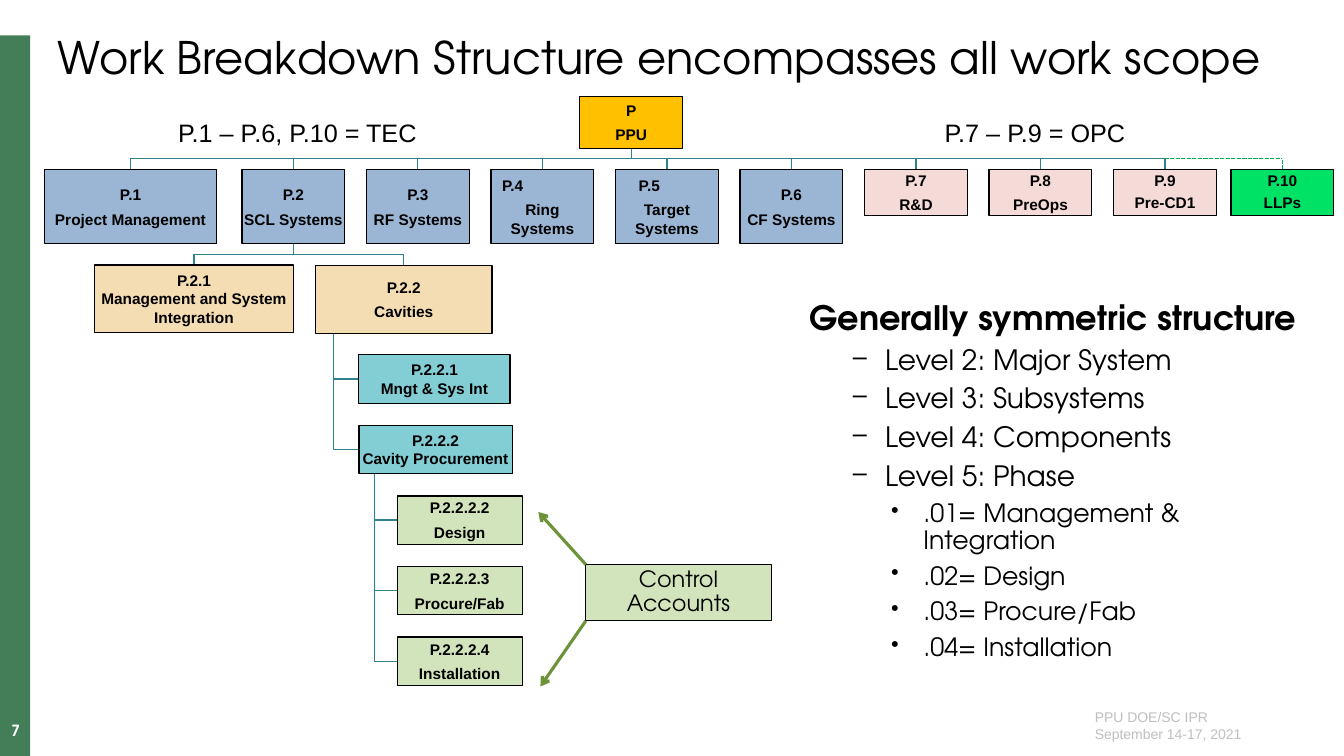
from lxml.etree import SubElement
from pptx import Presentation
from pptx.dml.color import RGBColor
from pptx.enum.dml import MSO_LINE as Dash
from pptx.enum.shapes import MSO_CONNECTOR as Conn, MSO_SHAPE as Shape
from pptx.enum.text import MSO_ANCHOR as Anchor, PP_ALIGN as Align
from pptx.oxml.ns import qn
from pptx.util import Inches, Pt

# Content
TITLE = "Work Breakdown Structure encompasses all work scope"
HEAD = "Generally symmetric structure"
LEVELS = [
    (1, "Level 2: Major System"), (1, "Level 3: Subsystems"),
    (1, "Level 4: Components"), (1, "Level 5: Phase"),
    (2, ".01= Management & Integration"), (2, ".02= Design"),
    (2, ".03= Procure/Fab"), (2, ".04= Installation"),
]
STYLE = {1: ("–", 0.75, 20), 2: ("•", 1.13, 18)}  # bullet, indent, size
SCOPES = [("P.1 – P.6, P.10 = TEC", 0.77, 4.36), ("P.7 – P.9 = OPC", 8.91, 2.71)]
FOOT = ["PPU DOE/SC IPR", "September 14-17, 2021"]
SYSTEMS = ["SCL Systems", "RF Systems", "Ring Systems", "Target Systems",
           "CF Systems", "R&D", "PreOps", "Pre-CD1"]
PHASES = ["Design", "Procure/Fab", "Installation"]
INDENT = {"P.4": 0.1, "P.5": 0.22}  # codes set off to the left
TIGHT = {"P.9", "P.10"}             # codes with narrow line spacing
PACKED = {"P.2.1", "P.2.2.1", "P.2.2.2"}  # codes without a gap below

SANS, GEO = "Arial", "TeX Gyre Adventor"
GOLD, BLUE, PINK, LIME = "FFC000", "9AB6D4", "F5DBD8", "00E266"
SAND, AQUA, LEAF = "F5DDB3", "83CDD5", "D2E4BB"
TEAL, DASHED, ARROW = "2F828B", "00B050", "6C923A"

# Boxes: code -> name, left, top, width, height, fill
ROW, WIDE, STEP = 1.68, 1.02, 1.235
boxes = {
    "P": ("PPU", 5.75, 0.96, WIDE, 0.51, GOLD),
    "P.1": ("Project Management", 0.44, ROW, 1.71, 0.74, BLUE),
}
for i, name in enumerate(SYSTEMS):
    tall, fill = (0.74, BLUE) if i < 5 else (0.46, PINK)
    boxes[f"P.{i + 2}"] = (name, 2.4 + STEP * i, ROW, WIDE, tall, fill)
tops = list(boxes)[1:]
boxes |= {
    "P.10": ("LLPs", 12.21, ROW, WIDE, 0.46, LIME),
    "P.2.1": ("Management and System Integration", 0.94, 2.63, 1.97, 0.67, SAND),
    "P.2.2": ("Cavities", 3.13, 2.63, 1.75, 0.68, SAND),
    "P.2.2.1": ("Mngt & Sys Int", 3.56, 3.52, 1.5, 0.48, AQUA),
    "P.2.2.2": ("Cavity Procurement", 3.56, 4.22, 1.52, 0.48, AQUA),
}
for i, name in enumerate(PHASES):
    boxes[f"P.2.2.2.{i + 2}"] = (name, 3.94, 4.92 + 0.7 * i, 1.24, 0.48, LEAF)

deck = Presentation()
deck.slide_width, deck.slide_height = Inches(13.33), Inches(7.5)
slide = deck.slides.add_slide(deck.slide_layouts[5])
shapes = slide.shapes


def color(code):
    return RGBColor.from_string(code)


def place(*nums):
    return [Inches(n) for n in nums]


def write(par, text, size, font=SANS, ink="000000", bold=False,
          align=Align.LEFT, line=None):
    run = par.add_run()
    run.text = text
    run.font.size, run.font.name, run.font.bold = Pt(size), font, bold
    run.font.color.rgb = color(ink)
    par.alignment = align
    if line:
        par.line_spacing = line


def setup(frame, inset=None, anchor=Anchor.TOP):
    frame.word_wrap, frame.vertical_anchor = True, anchor
    if inset is not None:
        frame.margin_left = frame.margin_right = Inches(inset)
        frame.margin_top = frame.margin_bottom = Inches(inset)
    return frame


def label(spot, inset=None):
    return setup(shapes.add_textbox(*place(*spot)).text_frame, inset)


def block(spot, fill, edge=None):
    box = shapes.add_shape(Shape.RECTANGLE, *place(*spot))
    box.shadow.inherit = False
    box.fill.solid()
    box.fill.fore_color.rgb = color(fill)
    if edge:
        box.line.color.rgb, box.line.width = color("000000"), Pt(edge)
    else:
        box.line.fill.background()
    return box.text_frame


def elbow(points):
    first, *rest = [place(*p) for p in points]
    path = shapes.build_freeform(*first)
    path.add_line_segments(rest, close=False)
    bend = path.convert_to_shape()
    bend.shadow.inherit = False
    bend.fill.background()
    bend.line.color.rgb, bend.line.width = color(TEAL), Pt(0.85)


def link(start, end, ink, width):
    line = shapes.add_connector(Conn.STRAIGHT, *place(*start, *end))
    line.line.color.rgb, line.line.width = color(ink), Pt(width)
    SubElement(line._element.spPr, qn("a:effectLst"))
    return line


def drop(top, kid):
    """Join a box to one in the row below."""
    _, x, y, w, h, _ = boxes[top]
    _, left, end, wide, _, _ = boxes[kid]
    mid, goal, bar = x + w / 2, left + wide / 2, (y + h + end) / 2
    elbow([(mid, y + h), (mid, bar), (goal, bar), (goal, end)])


def hook(top, kid):
    """Join a box to the left side of one below it."""
    _, x, y, w, h, _ = boxes[top]
    _, left, end, _, tall, _ = boxes[kid]
    trunk, goal = x + w / 10, end + tall / 2
    elbow([(trunk, y + h), (trunk, goal), (left, goal)])


# Side band, page number and footer
block((0, 0.35, 0.3, 7.15), "447E59")
write(label((0, 7.17, 0.31, 0.17), 0).paragraphs[0], "7", 11, GEO, "FFFFFF",
      True, Align.CENTER, 0.9)
foot = label((10.76, 6.98, 2.23, 0.44))
for i, text in enumerate(FOOT):
    write(foot.add_paragraph() if i else foot.paragraphs[0], text, 10, ink="BFBFBF")

# Title
title = shapes.title
title.left, title.top, title.width, title.height = place(0.47, 0.3, 12.5, 0.59)
write(setup(title.text_frame, anchor=Anchor.MIDDLE).paragraphs[0], TITLE, 32,
      GEO, line=0.9)

# Tree lines
for kid in tops:
    drop("P", kid)
for kid in ("P.2.1", "P.2.2"):
    drop("P.2", kid)
for top in ("P.2.2", "P.2.2.2"):
    for kid in boxes:
        if kid.rpartition(".")[0] == top:
            hook(top, kid)

# Tree boxes
for code, (name, *spot, fill) in boxes.items():
    frame = setup(block(spot, fill, 0.85), 0.01, Anchor.MIDDLE)
    par, line = frame.paragraphs[0], 0.9 if code in TIGHT else None
    side = Align.CENTER
    if code in INDENT:
        side = Align.LEFT
        par._p.get_or_add_pPr().set("marL", str(Inches(INDENT[code])))
    write(par, code, 11, bold=True, align=side, line=line)
    if code not in PACKED:
        par.space_after = Pt(4.4)
    write(frame.add_paragraph(), name, 11, bold=True, align=Align.CENTER, line=line)

# Dashed branch to the last system
for start, end in [((11.55, 1.57), (12.72, 1.57)), ((12.72, ROW), (12.72, 1.57))]:
    link(start, end, DASHED, 1).line.dash_style = Dash.SQUARE_DOT

# Scope labels
for text, left, wide in SCOPES:
    write(label((left, 1.15, wide, 0.37)).paragraphs[0], text, 18,
          align=Align.CENTER, line=0.9)

# Level list
frame = setup(block((7.93, 2.94, 5.24, 3.87), "FFFFFF"))
write(frame.paragraphs[0], HEAD, 24, GEO, bold=True, line=0.9)
for level, text in LEVELS:
    mark, left, size = STYLE[level]
    par = frame.add_paragraph()
    par.level = level
    props = par._p.get_or_add_pPr()
    props.set("marL", str(Inches(left)))
    props.set("indent", str(Inches(-0.32)))
    SubElement(SubElement(props, qn("a:buClr")), qn("a:srgbClr"), val="000000")
    SubElement(props, qn("a:buSzPct"), val="90000")
    SubElement(props, qn("a:buChar"), char=mark)
    par.space_before = Pt(6)
    write(par, text, size, GEO, line=0.9)

# Control accounts with arrows
frame = setup(block((5.81, 5.6, 1.84, 0.56), LEAF, 0.75), 0.05, Anchor.MIDDLE)
write(frame.paragraphs[0], "Control Accounts", 16, GEO, align=Align.CENTER, line=0.9)
for start, end in [((5.81, 5.6), (5.34, 5.08)), ((5.81, 6.16), (5.36, 6.81))]:
    line = link(start, end, ARROW, 2.25)
    SubElement(line.line._get_or_add_ln(), qn("a:tailEnd"), type="arrow")

deck.save("out.pptx")
